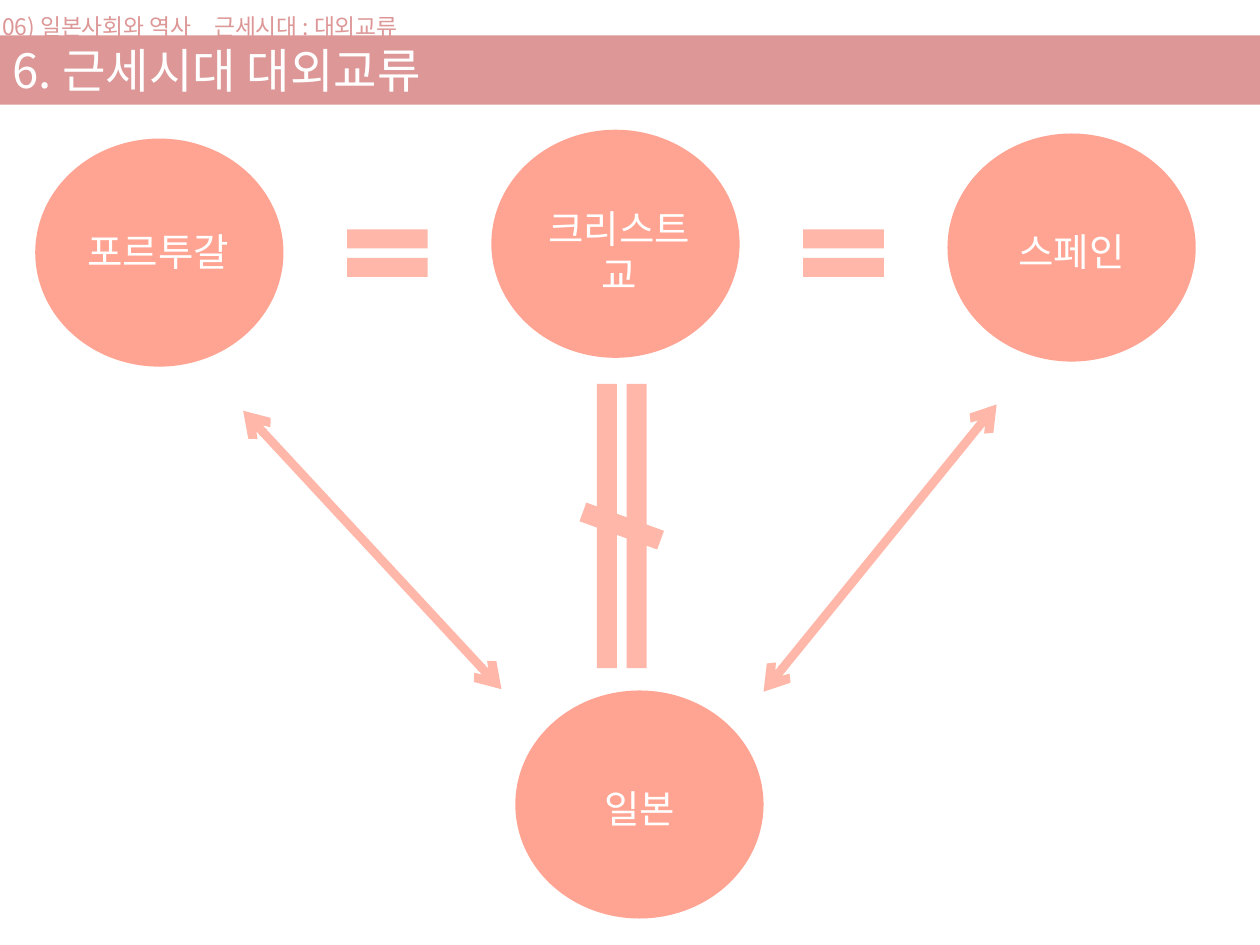
from pptx import Presentation
from pptx.dml.color import RGBColor
from pptx.enum.shapes import MSO_CONNECTOR, MSO_SHAPE
from pptx.enum.text import MSO_ANCHOR, PP_ALIGN
from pptx.oxml.ns import qn
from pptx.util import Inches, Pt
from lxml import etree

RECT = MSO_SHAPE.RECTANGLE
OVAL = MSO_SHAPE.OVAL
EQUAL = MSO_SHAPE.MATH_EQUAL
UNEQUAL = MSO_SHAPE.MATH_NOT_EQUAL
STRAIGHT = MSO_CONNECTOR.STRAIGHT
MIDDLE = MSO_ANCHOR.MIDDLE
LEFT = PP_ALIGN.LEFT
CENTER = PP_ALIGN.CENTER

ROSE = RGBColor(0xDD, 0x97, 0x97)
CORAL = RGBColor(0xFF, 0xA4, 0x92)
PEACH = RGBColor(0xFE, 0xB7, 0xA8)
WHITE = RGBColor(0xFF, 0xFF, 0xFF)
FONT = "Noto Sans CJK KR"


def write(frame, text, size, color, align):
    frame.word_wrap = True
    frame.text = text
    para = frame.paragraphs[0]
    para.alignment = align
    font = para.runs[0].font
    font.size = Pt(size)
    font.name = FONT
    font.color.rgb = color
    props = para.runs[0]._r.get_or_add_rPr()
    etree.SubElement(props, qn("a:ea")).set("typeface", FONT)


def add_text(slide, box, text, size, color, align):
    label = slide.shapes.add_textbox(*map(Inches, box))
    write(label.text_frame, text, size, color, align)


def add_shape(slide, kind, box, color):
    shape = slide.shapes.add_shape(kind, *map(Inches, box))
    shape.shadow.inherit = False
    shape.fill.solid()
    shape.fill.fore_color.rgb = color
    shape.line.fill.background()
    return shape


def add_node(slide, left, top, text, text_box):
    add_shape(slide, OVAL, (left, top, 1.97, 1.81), CORAL)
    add_text(slide, text_box, text, 22, WHITE, CENTER)


def add_arrow(slide, start, end):
    arrow = slide.shapes.add_connector(STRAIGHT, *map(Inches, start + end))
    arrow.line.color.rgb = PEACH
    arrow.line.width = Pt(5)
    line = arrow.line._get_or_add_ln()
    for tip in ("a:headEnd", "a:tailEnd"):
        etree.SubElement(line, qn(tip)).set("type", "arrow")
    etree.SubElement(arrow._element.spPr, qn("a:effectLst"))


def add_header(slide):
    add_text(slide, (-0.08, 0.05, 5.87, 0.31),
             "06) 일본사회와 역사 _ 근세시대 : 대외교류", 13, ROSE, LEFT)
    band = add_shape(slide, RECT, (0, 0.28, 10, 0.55), ROSE)
    band.text_frame.vertical_anchor = MIDDLE
    write(band.text_frame, "6. 근세시대 대외교류", 27, WHITE, LEFT)


def main():
    deck = Presentation()
    deck.slide_width = Inches(10)
    deck.slide_height = Inches(7.5)
    slide = deck.slides.add_slide(deck.slide_layouts[6])

    add_header(slide)
    add_node(slide, 3.9, 1.03, "크리스트교", (4.13, 1.58, 1.57, 0.83))
    add_node(slide, 0.28, 1.1, "포르투갈", (0.47, 1.76, 1.57, 0.46))
    add_node(slide, 7.52, 1.06, "스페인", (7.72, 1.76, 1.57, 0.46))
    for left in (2.64, 6.26):
        add_shape(slide, EQUAL, (left, 1.69, 0.87, 0.64), PEACH)
    barrier = add_shape(slide, UNEQUAL, (3.4, 3.84, 3.07, 0.67), PEACH)
    barrier.rotation = 270
    add_node(slide, 4.09, 5.48, "일본", (4.29, 6.18, 1.57, 0.46))
    add_arrow(slide, (1.93, 3.26), (3.98, 5.47))
    add_arrow(slide, (7.91, 3.21), (6.06, 5.49))

    deck.save("out.pptx")


if __name__ == "__main__":
    main()
